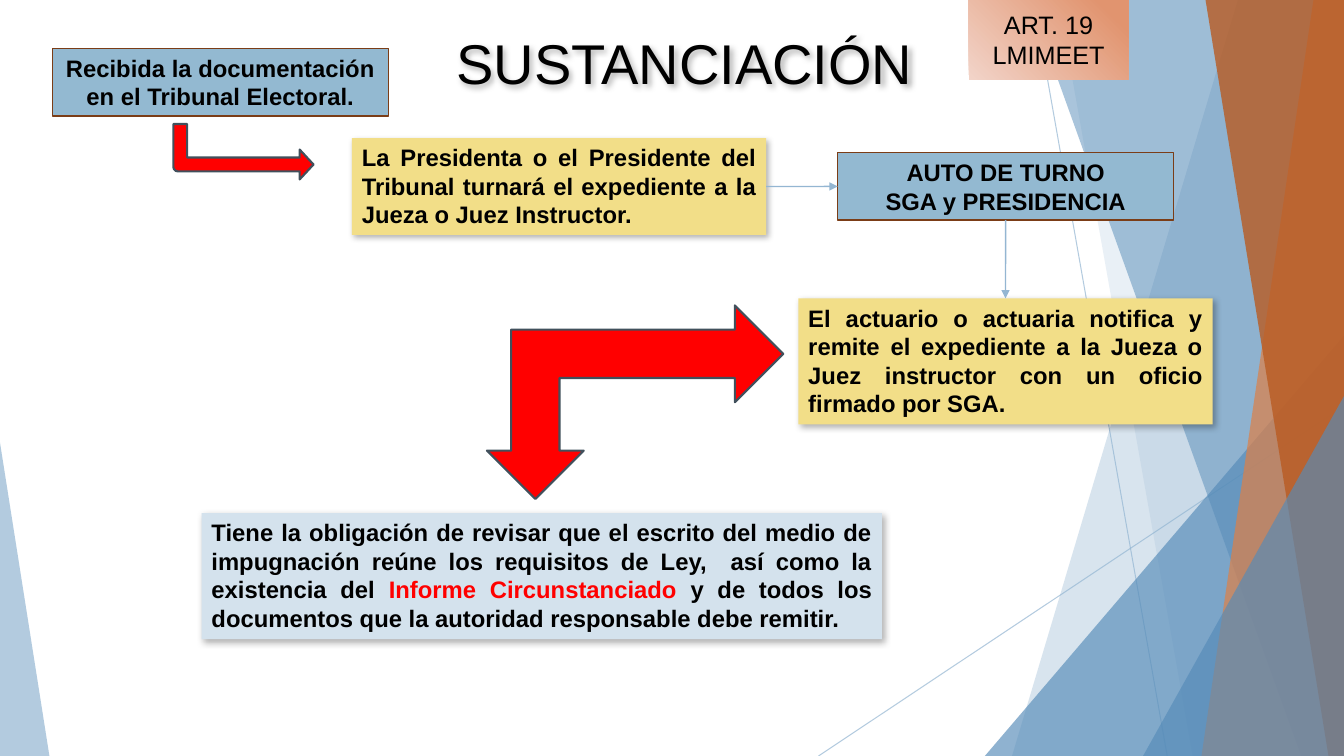
from lxml.etree import SubElement as Sub
from pptx import Presentation
from pptx.dml.color import RGBColor
from pptx.enum.shapes import MSO_CONNECTOR as Link, MSO_SHAPE as Kind
from pptx.enum.text import MSO_ANCHOR as Anchor, PP_ALIGN as Align
from pptx.oxml.ns import qn
from pptx.util import Inches, Pt

WIDE, HIGH = Inches(13.333), Inches(7.5)
SKY, BLUE, CLAY, RUST = "94B6D2", "558BB8", "DD8047", "B95B22"
STEEL, SAND, MIST, RED = "93B9D1", "F2DE88", "D4E2ED", "FF0000"
BROWN, SLATE, BLACK = "7B3D17", "41505C", "000000"


def rgb(code):
    return RGBColor.from_string(code)


def col(share):
    """Percentage of the slide's width."""
    return round(WIDE * share / 100)


def row(share):
    """Percentage of the slide's height."""
    return round(HIGH * share / 100)


def frame(x, y, w, h):
    return col(x), row(y), col(w), row(h)


def fade(shape, share):
    """Make every colour of the shape partly transparent."""
    for tone in shape.element.spPr.iter(qn("a:srgbClr")):
        Sub(tone, qn("a:alpha"), val=str(share * 1000))


def paint(shape, fill=None, edge=None, width=1):
    shape.shadow.inherit = False
    if fill:
        shape.fill.solid()
        shape.fill.fore_color.rgb = rgb(fill)
    if edge:
        shape.line.color.rgb = rgb(edge)
        shape.line.width = Pt(width)
    else:
        shape.line.fill.background()


def shade(shape):
    """Drop a soft shadow to the lower right."""
    soft = shape.element.spPr.find(qn("a:effectLst"))
    drop = Sub(soft, qn("a:outerShdw"), blurRad=str(Pt(4.5)), dist=str(Pt(2.6)),
               dir=str(53 * 60000), algn="tl", rotWithShape="0")
    tone = Sub(drop, qn("a:srgbClr"), val=BLACK)
    Sub(tone, qn("a:alpha"), val="30000")


def write(shape, lines, size=17, bold=True, align=Align.CENTER, anchor=Anchor.TOP):
    """Each line is a list of (text, colour) runs."""
    text = shape.text_frame
    text.word_wrap = True
    text.vertical_anchor = anchor
    for i, line in enumerate(lines):
        para = text.add_paragraph() if i else text.paragraphs[0]
        para.alignment = align
        for words, tone in line:
            run = para.add_run()
            run.text = words
            run.font.color.rgb = rgb(tone)
            look = {"name": "Arial", "size": Pt(size), "bold": bold}
            for key, value in look.items():
                setattr(run.font, key, value)


def band(shapes, top, foot, fill, share):
    """Facet reaching from a slanted left side to the slide's right edge."""
    pen = shapes.build_freeform(col(top), 0)
    pen.add_line_segments([(WIDE, 0), (WIDE, HIGH), (col(foot), HIGH)])
    shape = pen.convert_to_shape()
    paint(shape, fill)
    fade(shape, share)


def wedge(shapes, x, y, w, tip, fill, share):
    """Triangle standing on the slide's lower edge."""
    shape = shapes.add_shape(Kind.ISOSCELES_TRIANGLE, *frame(x, y, w, 100 - y))
    shape.adjustments[0] = tip
    paint(shape, fill)
    fade(shape, share)


def rule(shapes, x1, y1, x2, y2, width):
    line = shapes.add_connector(Link.STRAIGHT, col(x1), row(y1), col(x2), row(y2))
    line.line.color.rgb = rgb(SKY)
    line.line.width = Pt(width)
    Sub(line.element.spPr, qn("a:effectLst"))
    return line


def join(shapes, start, out, end, into):
    line = rule(shapes, 0, 0, 1, 1, 1)
    line.begin_connect(start, out)
    line.end_connect(end, into)
    Sub(line.element.spPr.find(qn("a:ln")), qn("a:tailEnd"), type="triangle")


def step(shapes, place, lines, fill, edge=None):
    """Flow box: edged and centred, or shadowed and justified."""
    box = shapes.add_shape(Kind.RECTANGLE, *frame(*place))
    paint(box, fill, edge)
    if not edge:
        shade(box)
    write(box, lines, align=Align.CENTER if edge else Align.JUSTIFY)
    return box


def arrow(shapes, kind, place):
    shape = shapes.add_shape(kind, *frame(*place))
    paint(shape, RED, SLATE, 1.5)
    shape.rotation = 180
    return shape


def decor(shapes):
    for ends in ((76.9, 0, 86.85, 100), (100, 53.73, 60.9, 100)):
        fade(rule(shapes, *ends, 0.75), 70)
    band(shapes, 92.1, 75.3, SKY, 36)
    band(shapes, 78.75, 88.75, SKY, 20)
    wedge(shapes, 73.28, 44.4, 26.72, 1, BLUE, 66)
    band(shapes, 76.58, 96.83, BLUE, 50)
    band(shapes, 97.73, 89.4, CLAY, 70)
    band(shapes, 89.7, 98.85, RUST, 80)
    wedge(shapes, 85.05, 52.4, 14.95, 1, BLUE, 66)
    wedge(shapes, 0, 58.53, 3.68, 0, SKY, 70)


def badge(shapes):
    box = shapes.add_shape(Kind.RECTANGLE, *frame(72.08, 0, 11.88, 10.53))
    paint(box)
    box.fill.gradient()
    box.fill.gradient_angle = 45
    for stop, spot, tone in zip(box.fill.gradient_stops, (0, 0.88), ("F2D4C9", "E1946F")):
        stop.position = spot
        stop.color.rgb = rgb(tone)
    write(box, [[("ART. 19 LMIMEET", BLACK)]], 18, False, anchor=Anchor.MIDDLE)


def title(shapes):
    box = shapes.add_textbox(*frame(27.9, 3.07, 46.05, 10.27))
    paint(box)
    shade(box)
    write(box, [[("SUSTANCIACIÓN", BLACK)]], 40, False)


def flow(shapes):
    step(shapes, (3.9, 6.4, 25, 8.93),
         [[("Recibida la documentación en el Tribunal Electoral.", BLACK)]], STEEL, BROWN)
    judge = step(shapes, (26.18, 18.27, 30.83, 12.8), [[(
        "La Presidenta o el Presidente del Tribunal turnará el expediente "
        "a la Jueza o Juez Instructor.", BLACK)]], SAND)
    step(shapes, (15, 67.87, 50.63, 16.67), [[
        ("Tiene la obligación de revisar que el escrito del medio de impugnación "
         "reúne los requisitos de Ley,  así como la existencia del ", BLACK),
        ("Informe Circunstanciado", RED),
        (" y de todos los documentos que la autoridad responsable debe remitir.", BLACK),
    ]], MIST)
    turn = step(shapes, (62.33, 20.2, 25, 8.93),
                [[("AUTO DE TURNO", BLACK)], [("SGA y PRESIDENCIA", BLACK)]], STEEL, BROWN)
    clerk = step(shapes, (59.4, 39.47, 30.83, 16.67), [[(
        "El actuario o actuaria notifica y remite el expediente a la Jueza o "
        "Juez instructor con un oficio firmado por SGA.", BLACK)]], SAND)
    join(shapes, judge, 3, turn, 1)
    join(shapes, turn, 2, clerk, 0)
    bent = arrow(shapes, Kind.BENT_ARROW, (12.9, 16.4, 10.43, 7.33))
    bent.element.spPr.find(qn("a:xfrm")).set("flipH", "1")
    for i, value in enumerate((0.25, 0.27, 0.25, 0.08)):
        bent.adjustments[i] = value
    arrow(shapes, Kind.LEFT_UP_ARROW, (36.23, 40.4, 22.05, 25.6))


def main():
    deck = Presentation()
    deck.slide_width, deck.slide_height = WIDE, HIGH
    shapes = deck.slides.add_slide(deck.slide_layouts[6]).shapes
    for part in (decor, badge, title, flow):
        part(shapes)
    deck.save("out.pptx")


if __name__ == "__main__":
    main()
